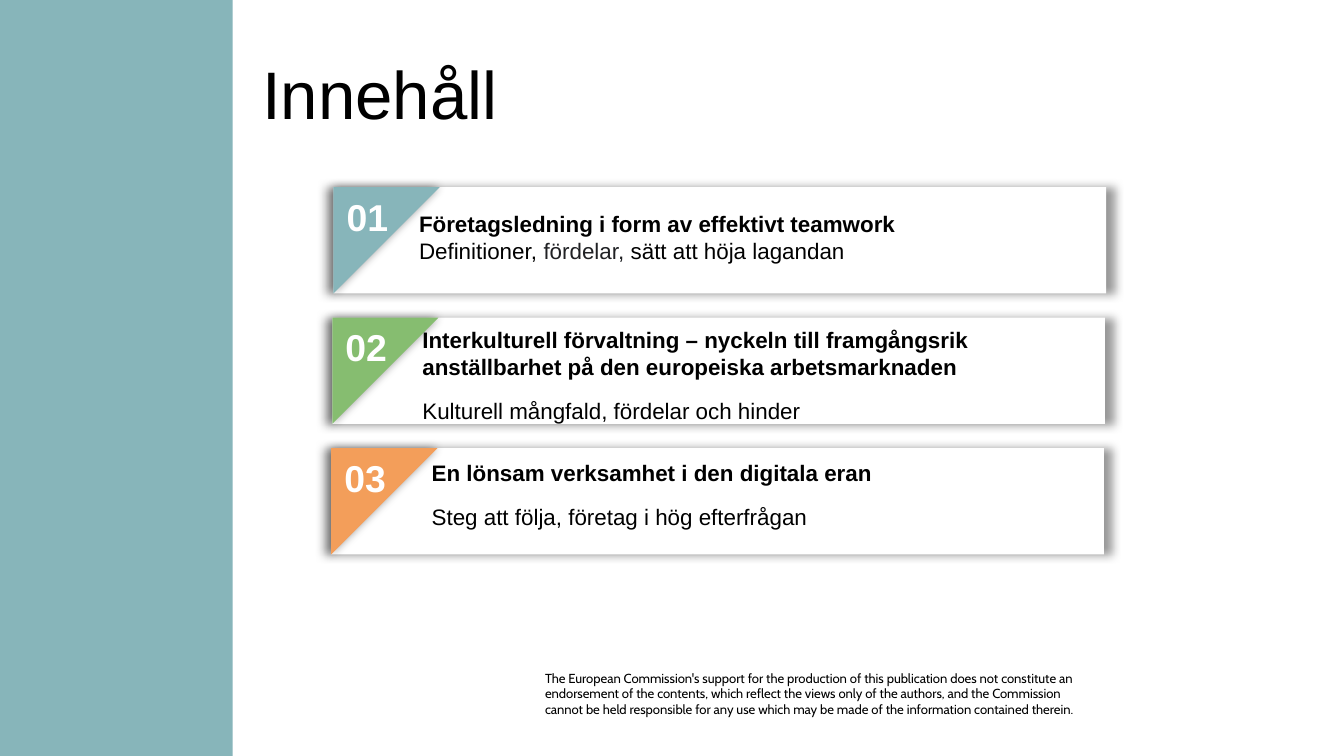
"""Builds a contents slide with three numbered cards."""
import pptx
import pptx.util
import pptx.dml.color
import pptx.enum.shapes
import pptx.enum.text
import pptx.oxml
import pptx.oxml.ns

Pt = pptx.util.Pt
Kind = pptx.enum.shapes.MSO_SHAPE
Text = pptx.enum.text

TITLE = "Innehåll"
BLACK, WHITE, TEAL = "000000", "FFFFFF", "87B5BA"
CARDS = [
    dict(hue=TEAL, box=(217.4, 109, 373.7, 36), lead=(1, 1), gap=0,
         head="Företagsledning i form av effektivt teamwork",
         body=[("Definitioner, ", BLACK), ("fördelar, ", "202124"),
               ("sätt att höja lagandan", BLACK)]),
    dict(hue="86BD70", box=(219.2, 171.4, 360, 59.8), lead=(1, 1.07), gap=8,
         head="Interkulturell förvaltning – nyckeln till framgångsrik "
              "anställbarhet på den europeiska arbetsmarknaden",
         body=[("Kulturell mångfald, fördelar och hinder", BLACK)]),
    dict(hue="F39E5A", box=(224.2, 241.4, 360, 46.8), lead=(1.07, 1.07), gap=8,
         head="En lönsam verksamhet i den digitala eran",
         body=[("Steg att följa, företag i hög efterfrågan", BLACK)]),
]
NOTE = [
    "The European Commission's support for the production of this publication "
    "does not constitute an endorsement of the contents, which reflect the "
    "views only of the authors, and the Commission",
    "cannot be held responsible for any use which may be made of the "
    "information contained therein.",
]
LEFT, TOP, STEP, SHIFT = 178.6, 100.3, 69.9, -0.6
WIDE, HIGH = 414, 56.9


def color(hue):
    return pptx.dml.color.RGBColor.from_string(hue)


def write(para, text, size, hue=BLACK, bold=False, face="Arial"):
    run = para.add_run()
    run.text = text
    font = run.font
    font.size, font.bold, font.name = Pt(size), bold, face
    font.color.rgb = color(hue)


def frame(slide, box, inset=(7.2, 3.6)):
    text = slide.shapes.add_textbox(*map(Pt, box)).text_frame
    text.word_wrap = True
    text.margin_left = text.margin_right = Pt(inset[0])
    text.margin_top = text.margin_bottom = Pt(inset[1])
    return text


def block(slide, kind, box, hue):
    shape = slide.shapes.add_shape(kind, *map(Pt, box))
    shape.shadow.inherit = False
    shape.fill.solid()
    shape.fill.fore_color.rgb = color(hue)
    shape.line.fill.background()
    return shape


def shade(shape, scale=100):
    glow = pptx.oxml.parse_xml(
        f'<a:outerShdw {pptx.oxml.ns.nsdecls("a")} blurRad="{Pt(5)}" dist="0" '
        f'dir="0" sx="{scale * 1000}" algn="ctr" rotWithShape="0">'
        f'<a:srgbClr val="{BLACK}"><a:alpha val="40000"/></a:srgbClr></a:outerShdw>')
    shape.element.spPr.find(pptx.oxml.ns.qn("a:effectLst")).append(glow)


def card(slide, rank, item):
    x, y = LEFT + rank * SHIFT, TOP + rank * STEP
    shade(block(slide, Kind.RECTANGLE, (x, y, WIDE, HIGH), WHITE), 102)
    flag = block(slide, Kind.RIGHT_TRIANGLE, (x, y, HIGH, HIGH), item["hue"])
    flag.rotation = 90
    shade(flag)
    label = frame(slide, (x, y, 41.8, 31.7))
    write(label.paragraphs[0], f"{rank + 1:02}", 20, WHITE, True)
    text = frame(slide, item["box"])
    head, body = text.paragraphs[0], text.add_paragraph()
    head.line_spacing, body.line_spacing = item["lead"]
    body.space_before = Pt(item["gap"])
    write(head, item["head"], 12, bold=True)
    for words, hue in item["body"]:
        write(body, words, 12, hue)


def main():
    deck = pptx.Presentation()
    deck.slide_width, deck.slide_height = Pt(720), Pt(405)
    slide = deck.slides.add_slide(deck.slide_layouts[5])
    title = slide.shapes.title
    title.left, title.top, title.width, title.height = map(Pt, (133.2, 27, 518.4, 45.4))
    text = title.text_frame
    text.auto_size = Text.MSO_AUTO_SIZE.NONE
    text.vertical_anchor = Text.MSO_ANCHOR.MIDDLE
    text.paragraphs[0].alignment = Text.PP_ALIGN.LEFT
    write(text.paragraphs[0], TITLE, 36)
    block(slide, Kind.RECTANGLE, (0, 0, 124.6, 405), TEAL)
    note = frame(slide, (292, 359, 300.2, 25.2), (0, 0))
    for rank, line in enumerate(NOTE):
        para = note.add_paragraph() if rank else note.paragraphs[0]
        write(para, line, 7, face="Cabin")
    for rank, item in enumerate(CARDS):
        card(slide, rank, item)
    deck.save("out.pptx")


if __name__ == "__main__":
    main()
